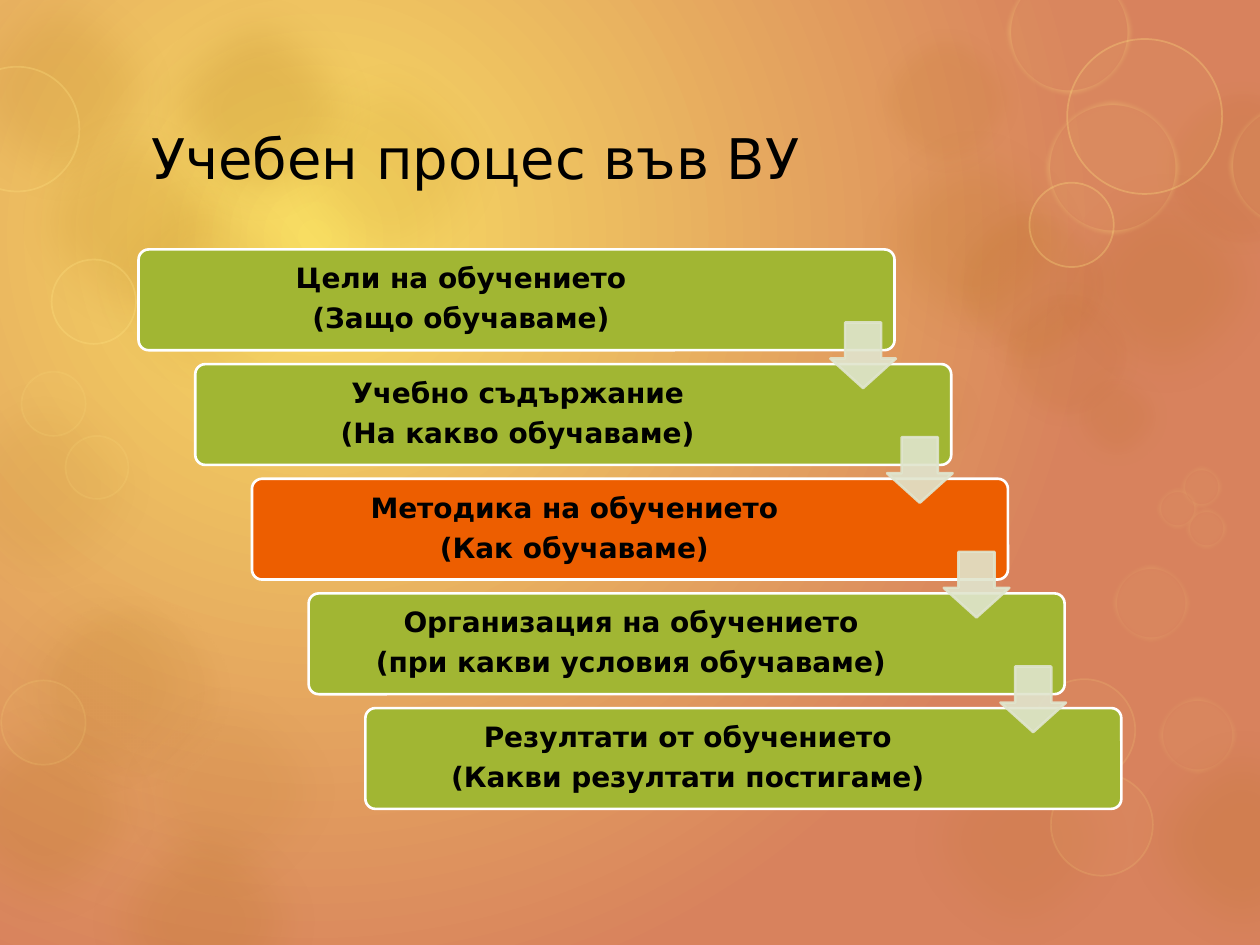
from lxml.etree import SubElement
from pptx import Presentation
from pptx.dml.color import RGBColor
from pptx.enum.shapes import MSO_SHAPE
from pptx.enum.text import MSO_ANCHOR, PP_ALIGN
from pptx.oxml.ns import qn
from pptx.util import Inches, Pt

FONT = "DejaVu Sans"
BLACK = RGBColor(0x00, 0x00, 0x00)
WHITE = RGBColor(0xFF, 0xFF, 0xFF)
YELLOW = RGBColor(0xF8, 0xDD, 0x62)
TERRACOTTA = RGBColor(0xD8, 0x82, 0x5D)
BROWN = RGBColor(0xAE, 0x6D, 0x11)
CREAM = RGBColor(0xFF, 0xE2, 0x81)
SAND = RGBColor(0xF1, 0xBD, 0x74)
GREEN = RGBColor(0xA1, 0xB6, 0x33)
ORANGE = RGBColor(0xED, 0x5E, 0x00)
PALE = RGBColor(0xE0, 0xE5, 0xCE)

WIDTH, HEIGHT = 10, 7.5
STEP_X, STEP_Y = 0.45, 0.91
BAR_LEFT, BAR_TOP, BAR_WIDTH, BAR_HEIGHT = 1.1, 1.98, 6, 0.8
ARROW_LEFT, ARROW_TOP, ARROW_SIZE = 6.59, 2.56, 0.52
INSET = 0.1
ARROW_ROOM = 0.98

STAGES = [
    (GREEN, "Цели на обучението", "(Защо обучаваме)"),
    (GREEN, "Учебно съдържание", "(На какво обучаваме)"),
    (ORANGE, "Методика на обучението", "(Как обучаваме)"),
    (GREEN, "Организация на обучението", "(при какви условия обучаваме)"),
    (GREEN, "Резултати от обучението", "(Какви резултати постигаме)"),
]


def blot(alpha):
    return {"fill": BROWN, "alpha": alpha, "soft": 0.35}


def halo(alpha, line_alpha):
    return {"fill": BROWN, "alpha": alpha, "line": SAND, "width": 14,
            "line_alpha": line_alpha, "soft": 0.17}


def ring(width, line_alpha):
    return {"fill": CREAM, "alpha": 5, "line": CREAM, "width": width,
            "line_alpha": line_alpha, "soft": 0.05 if width > 1 else 0}


BUBBLES = [
    (blot(8), [(-0.26, 4.42, 2.09), (0.77, 5.24, 2.09), (-0.7, 2.82, 2.09)]),
    (blot(10), [(0.57, 1.2, 2.09), (2.05, 0.31, 2.09), (7.06, 5.62, 2.09),
                (6.75, 2.62, 1.33)]),
    (blot(16), [(0.57, 6.27, 2.09), (8.81, 5.62, 2.09), (-0.69, 5.41, 2.09)]),
    (blot(15), [(-0.56, -0.32, 2.09), (0, 0.72, 2.09), (8.2, 1.2, 2.09),
                (6.69, 0.86, 2.09)]),
    (blot(20), [(1.01, -0.18, 2.09)]),
    (halo(10, 6), [(9.18, 0.65, 1.37), (6.94, 0.23, 1.14), (7.52, 1.59, 1.33),
                   (7.89, 2.24, 1.14), (8.47, 2.91, 0.79)]),
    (halo(6, 4), [(0.3, 4.73, 1.53)]),
    (ring(1, 15), [(0.01, 5.4, 0.67), (8.34, 6.14, 0.81), (8.2, 5.39, 0.81),
                   (0.17, 2.95, 0.51), (0.52, 3.46, 0.5)]),
    (ring(5, 15), [(8.83, 4.48, 0.61), (9.2, 5.53, 0.61), (9.37, 3.7, 0.33),
                   (9.18, 3.87, 0.33), (9.41, 4.03, 0.33)]),
    (ring(1, 30), [(-0.36, 0.53, 0.99), (0.41, 2.06, 0.67), (8.47, 0.31, 1.23),
                   (8.17, 1.45, 0.67)]),
    (ring(5, 30), [(7.99, -0.24, 0.99), (9.75, 0.82, 0.99), (8.3, 0.8, 1.06)]),
]


def set_values(target, values):
    for name, value in values.items():
        setattr(target, name, value)


def paint(shape, look):
    shape.shadow.inherit = False
    shape.fill.solid()
    shape.fill.fore_color.rgb = look["fill"]
    if "line" in look:
        shape.line.color.rgb = look["line"]
        shape.line.width = Pt(look["width"])
    else:
        shape.line.fill.background()
    properties = shape._element.spPr
    shares = (look.get("alpha", 100), look.get("line_alpha", 100))
    for color, share in zip(properties.iter(qn("a:srgbClr")), shares):
        if share < 100:
            SubElement(color, qn("a:alpha"), val=str(share * 1000))
    if look.get("soft"):
        effects = properties.find(qn("a:effectLst"))
        SubElement(effects, qn("a:softEdge"), rad=str(Inches(look["soft"])))


def add_preset(slide, kind, box, look, adjustments=()):
    shape = slide.shapes.add_shape(kind, *map(Inches, box))
    for index, value in enumerate(adjustments):
        shape.adjustments[index] = value
    paint(shape, look)
    return shape


def write(shape, lines, font_values, paragraph_values, right_inset=INSET):
    frame = shape.text_frame
    set_values(frame, {"word_wrap": True, "vertical_anchor": MSO_ANCHOR.MIDDLE,
                       "margin_left": Inches(INSET), "margin_right": Inches(right_inset)})
    for index, line in enumerate(lines):
        paragraph = frame.add_paragraph() if index else frame.paragraphs[0]
        set_values(paragraph, paragraph_values)
        run = paragraph.add_run()
        run.text = line
        set_values(run.font, {"name": FONT, **font_values})
        run.font.color.rgb = BLACK


def add_background(slide):
    fill = slide.background.fill
    fill.gradient()
    for stop, color in zip(fill.gradient_stops, (YELLOW, TERRACOTTA)):
        stop.color.rgb = color
    gradient = slide._element.find(".//" + qn("a:gradFill"))
    gradient.remove(gradient.find(qn("a:lin")))
    circle = SubElement(gradient, qn("a:path"))
    circle.set("path", "circle")
    SubElement(circle, qn("a:fillToRect"), l="25000", t="25000", r="75000", b="75000")


def add_title(slide, text):
    box = slide.shapes.add_textbox(*map(Inches, (1.1, 0.74, 7.79, 1.01)))
    write(box, [text], {"size": Pt(32)}, {"alignment": PP_ALIGN.LEFT})


def add_stage(slide, index, color, lines):
    box = (BAR_LEFT + index * STEP_X, BAR_TOP + index * STEP_Y, BAR_WIDTH, BAR_HEIGHT)
    look = {"fill": color, "line": WHITE, "width": 1.5}
    bar = add_preset(slide, MSO_SHAPE.ROUNDED_RECTANGLE, box, look, [0.1])
    write(bar, lines, {"size": Pt(16), "bold": True},
          {"alignment": PP_ALIGN.CENTER, "line_spacing": 0.9, "space_after": Pt(5.6)},
          ARROW_ROOM)


def add_arrow(slide, index):
    box = (ARROW_LEFT + index * STEP_X, ARROW_TOP + index * STEP_Y, ARROW_SIZE, ARROW_SIZE)
    look = {"fill": PALE, "alpha": 90, "line": PALE, "width": 1.5, "line_alpha": 90}
    add_preset(slide, MSO_SHAPE.DOWN_ARROW, box, look, [0.55, 0.45])


def main():
    presentation = Presentation()
    set_values(presentation, {"slide_width": Inches(WIDTH), "slide_height": Inches(HEIGHT)})
    slide = presentation.slides.add_slide(presentation.slide_layouts[6])
    add_background(slide)
    for look, circles in BUBBLES:
        for left, top, size in circles:
            add_preset(slide, MSO_SHAPE.OVAL, (left, top, size, size), look)
    add_title(slide, "Учебен процес във ВУ")
    for index, (color, *lines) in enumerate(STAGES):
        add_stage(slide, index, color, lines)
    for index in range(len(STAGES) - 1):
        add_arrow(slide, index)
    presentation.save("out.pptx")


if __name__ == "__main__":
    main()
